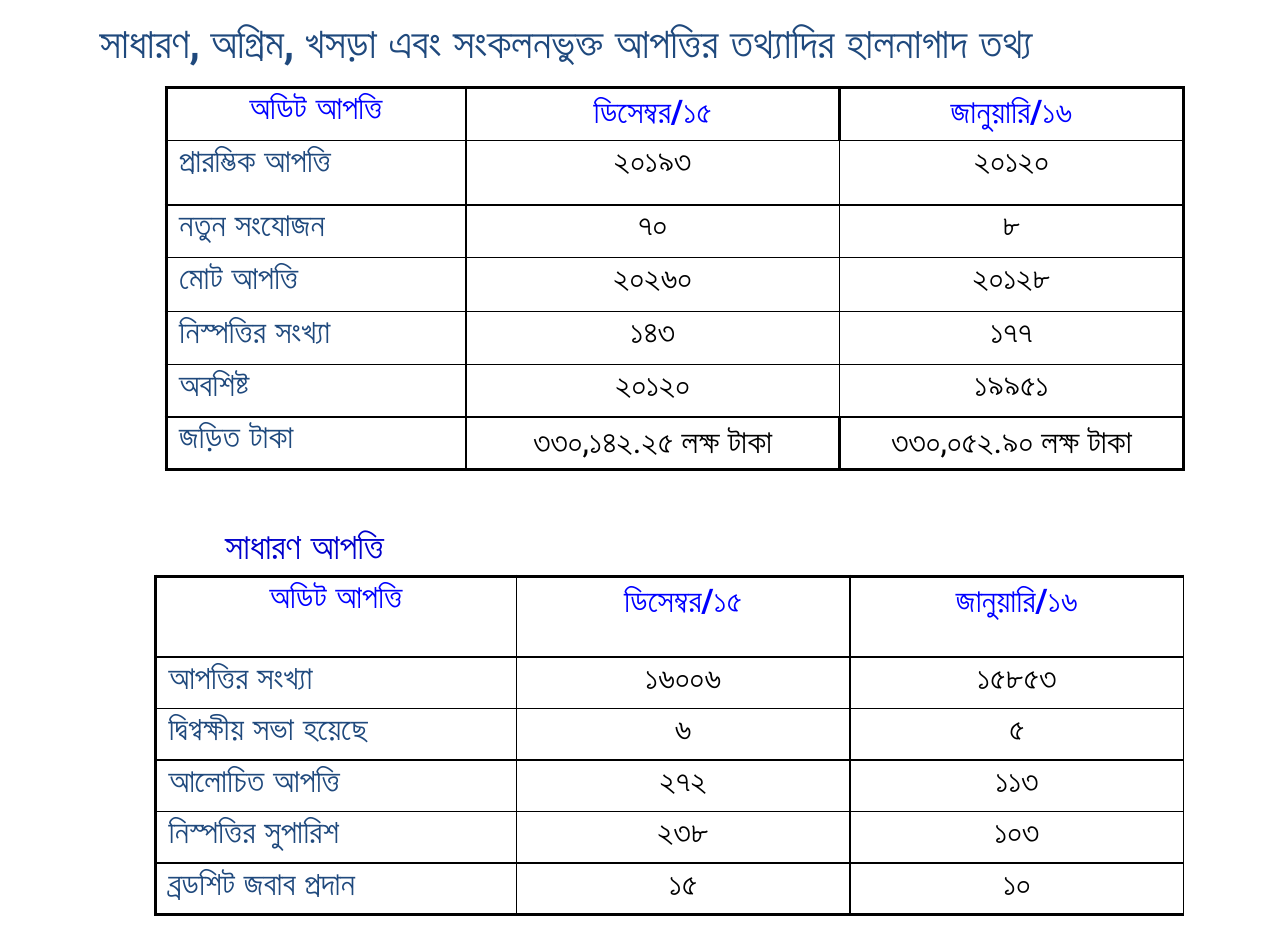
from lxml import etree
from pptx import Presentation
from pptx.dml.color import RGBColor
from pptx.enum import text
from pptx.oxml import ns
from pptx.util import Inches, Pt

FONT = "Roboto"
NAVY = RGBColor(0x1F, 0x49, 0x7D)
HEADER_BLUE = RGBColor(0x00, 0x00, 0xFF)
CAPTION_BLUE = RGBColor(0x00, 0x00, 0xCC)
BLACK = RGBColor(0x00, 0x00, 0x00)
THIN, THICK = Pt(1), Pt(2.25)
LEFT, CENTER, RIGHT = text.PP_ALIGN.LEFT, text.PP_ALIGN.CENTER, text.PP_ALIGN.RIGHT

TITLE = "সাধারণ, অগ্রিম, খসড়া এবং সংকলনভুক্ত আপত্তির তথ্যাদির হালনাগাদ তথ্য"
CAPTION = "সাধারণ আপত্তি"
HEADINGS = ("অডিট আপত্তি", "ডিসেম্বর/১৫", "জানুয়ারি/১৬")
ALL_OBJECTIONS = [
    HEADINGS,
    ("প্রারম্ভিক আপত্তি", "২০১৯৩", "২০১২০"),
    ("নতুন সংযোজন", "৭০", "৮"),
    ("মোট আপত্তি", "২০২৬০", "২০১২৮"),
    ("নিস্পত্তির সংখ্যা", "১৪৩", "১৭৭"),
    ("অবশিষ্ট", "২০১২০", "১৯৯৫১"),
    ("জড়িত টাকা", "৩৩০,১৪২.২৫ লক্ষ টাকা", "৩৩০,০৫২.৯০ লক্ষ টাকা"),
]
GENERAL_OBJECTIONS = [
    HEADINGS,
    ("আপত্তির সংখ্যা", "১৬০০৬", "১৫৮৫৩"),
    ("দ্বিপ্বক্ষীয় সভা হয়েছে", "৬", "৫"),
    ("আলোচিত আপত্তি", "২৭২", "১১৩"),
    ("নিস্পত্তির সুপারিশ", "২৩৮", "১০৩"),
    ("ব্রডশিট জবাব প্রদান", "১৫", "১০"),
]


def place(shape, box):
    shape.left, shape.top, shape.width, shape.height = map(Inches, box)


def write(frame, content, size, color, alignment, bold=True):
    frame.text = content
    paragraph = frame.paragraphs[0]
    paragraph.alignment = alignment
    paragraph.font.name = FONT
    paragraph.font.size = Pt(size)
    paragraph.font.bold = bold
    paragraph.font.color.rgb = color
    return paragraph


def set_borders(cell, widths):
    properties = cell._tc.get_or_add_tcPr()
    for index, (side, width) in enumerate(zip("LRTB", widths)):
        line = etree.Element(ns.qn(f"a:ln{side}"), w=str(int(width)))
        fill = etree.SubElement(line, ns.qn("a:solidFill"))
        etree.SubElement(fill, ns.qn("a:srgbClr"), val=str(BLACK))
        properties.insert(index, line)


def add_title(slide, box):
    title = slide.shapes.title
    place(title, box)
    frame = title.text_frame
    frame.auto_size = text.MSO_AUTO_SIZE.NONE
    frame.vertical_anchor = text.MSO_ANCHOR.TOP
    frame.margin_left = Inches(0.52)
    frame.margin_right = Inches(0.11)
    paragraph = write(frame, TITLE, 26, NAVY, LEFT)
    paragraph.line_spacing = 0.8


def add_caption(slide, box):
    frame = slide.shapes.add_textbox(*map(Inches, box)).text_frame
    frame.word_wrap = True
    frame.margin_left = frame.margin_right = Inches(0.11)
    write(frame, CAPTION, 22, CAPTION_BLUE, RIGHT)


def add_objection_table(slide, box, rows, column_widths, row_heights, framed):
    last_row, last_column = len(rows) - 1, len(column_widths) - 1
    table = slide.shapes.add_table(len(rows), len(column_widths), *map(Inches, box)).table
    table.first_row = table.horz_banding = False
    for column, width in zip(table.columns, column_widths):
        column.width = Inches(width)
    for row, height in zip(table.rows, row_heights):
        row.height = Inches(height)
    for r, values in enumerate(rows):
        thick_divider = framed and r in (0, last_row)
        for c, value in enumerate(values):
            cell = table.cell(r, c)
            cell.fill.background()
            cell.margin_left = cell.margin_right = Inches(0.11)
            color = HEADER_BLUE if r == 0 else NAVY if c == 0 else BLACK
            alignment = LEFT if r and c == 0 else CENTER
            write(cell.text_frame, value, 20, color, alignment, r == 0 or c == 0)
            thick_sides = (
                c == 0 or (thick_divider and c == last_column),
                (framed and c == last_column) or (thick_divider and c == 1),
                r == 0,
                r == last_row,
            )
            set_borders(cell, [THICK if thick else THIN for thick in thick_sides])


def build_slide(presentation):
    slide = presentation.slides.add_slide(presentation.slide_layouts[5])
    add_title(slide, (0.33, 0.17, 10.42, 0.5))
    add_objection_table(slide, (1.42, 0.75, 8.69, 3.27), ALL_OBJECTIONS,
                        (2.56, 3.19, 2.94), (0.45, 0.55, 0.45, 0.46, 0.45, 0.45, 0.45), True)
    add_caption(slide, (0.92, 4.42, 2.47, 0.48))
    add_objection_table(slide, (1.33, 4.92, 8.79, 2.92), GENERAL_OBJECTIONS,
                        (3.08, 2.85, 2.85), [0.69] + [0.44] * 5, False)


def main():
    presentation = Presentation()
    presentation.slide_width = Inches(11)
    presentation.slide_height = Inches(8)
    build_slide(presentation)
    presentation.save("out.pptx")


if __name__ == "__main__":
    main()
